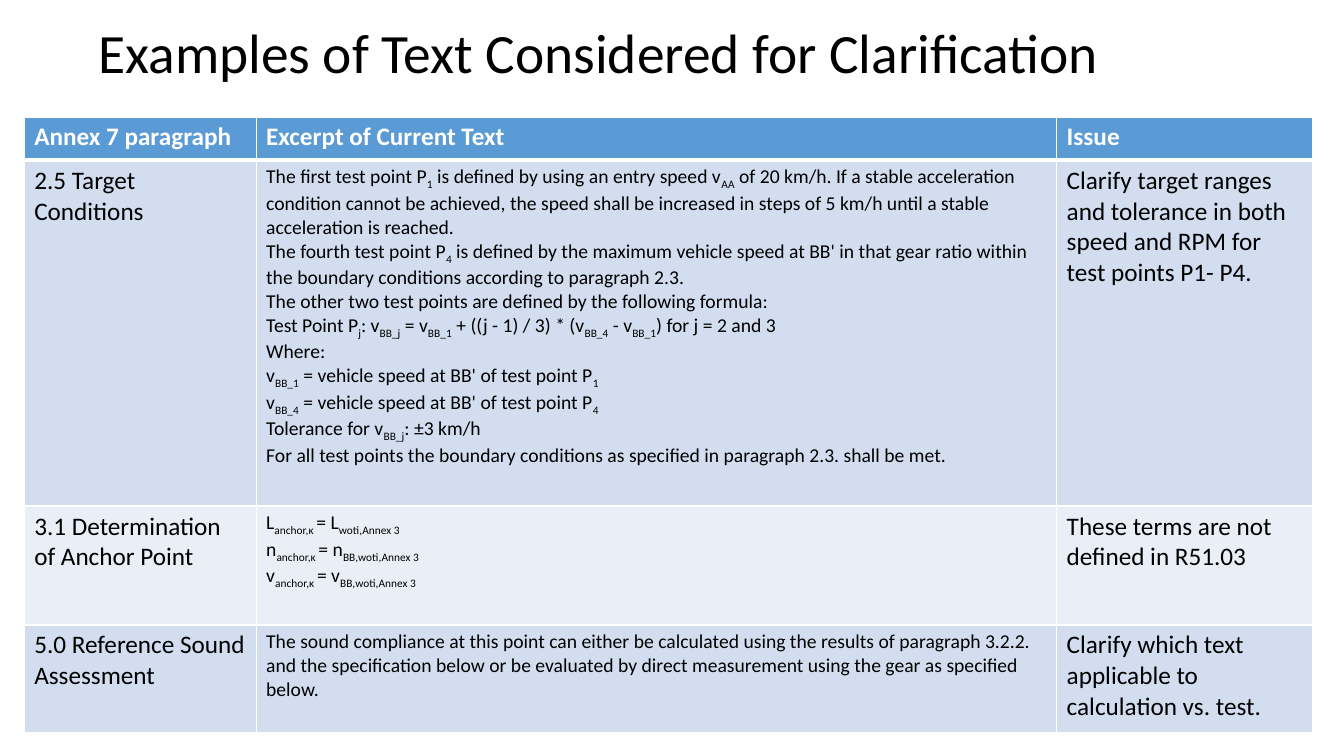
"""Build a slide with a table of regulation text that needs clarification."""
from lxml import etree
from pptx import Presentation
from pptx import util as u
from pptx.dml.color import RGBColor
from pptx.enum import text as t
from pptx.oxml import ns

TITLE = "Examples of Text Considered for Clarification"
HEAD = ["Annex 7 paragraph", "Excerpt of Current Text", "Issue"]
ROWS = [
    (
        "2.5 Target Conditions",
        [
            "The first test point P{1} is defined by using an entry speed v{AA} of 20 km/h. "
            "If a stable acceleration condition cannot be achieved, the speed shall be "
            "increased in steps of 5 km/h until a stable acceleration is reached.",
            "The fourth test point P{4} is defined by the maximum vehicle speed at BB' in "
            "that gear ratio within the boundary conditions according to paragraph 2.3.",
            "The other two test points are defined by the following formula:",
            "Test Point P{j}: v{BB_j} = v{BB_1} + ((j - 1) / 3) * (v{BB_4} - v{BB_1}) "
            "for j = 2 and 3",
            "Where:",
            "v{BB_1} = vehicle speed at BB' of test point P{1}",
            "v{BB_4} = vehicle speed at BB' of test point P{4}",
            "Tolerance for v{BB_j}: ±3 km/h",
            "For all test points the boundary conditions as specified in paragraph 2.3. "
            "shall be met.",
        ],
        "Clarify target ranges and tolerance in both speed and RPM for test points P1- P4.",
    ),
    (
        "3.1 Determination of Anchor Point",
        [
            "L{anchor,κ }= L{woti,Annex 3}",
            "n{anchor,κ }= n{BB,woti,Annex 3}",
            "v{anchor,κ }= v{BB,woti,Annex 3}",
        ],
        "These terms are not defined in R51.03",
    ),
    (
        "5.0 Reference Sound Assessment",
        [
            "The sound compliance at this point can either be calculated using the results "
            "of paragraph 3.2.2. and the specification below or be evaluated by direct "
            "measurement using the gear as specified below.",
        ],
        "Clarify which text applicable to calculation vs. test.",
    ),
]
WIDTHS = [2.3, 7.94, 2.54]
HEIGHTS = [0.43, 3.43, 1.18, 1.07]
THEME = {
    "font": "Calibri", "title": 39.6, "body": 18, "small": 14,
    "ink": "000000", "paper": "FFFFFF", "head": "5B9BD5",
    "bands": ["EAEFF7", "D2DEEF"], "thin": 1, "thick": 3,
}


def style(para, size, color, bold=False):
    font = para.font
    font.name, font.size, font.bold = THEME["font"], u.Pt(size), bold
    font.color.rgb = RGBColor.from_string(color)


def write(para, line):
    for i, part in enumerate(line.replace("}", "{").split("{")):
        if part:
            run = para.add_run()
            run.text = part
            if i % 2:
                run.font._element.set("baseline", "-25000")


def border(cell, row):
    props = cell._tc.get_or_add_tcPr()
    heavy = {(0, "B"), (1, "T")}
    for i, side in enumerate("LRTB"):
        size = THEME["thick" if (row, side) in heavy else "thin"]
        line = etree.Element(ns.qn(f"a:ln{side}"), w=str(u.Pt(size)))
        fill = etree.SubElement(line, ns.qn("a:solidFill"))
        etree.SubElement(fill, ns.qn("a:srgbClr"), val=THEME["paper"])
        props.insert(i, line)


def fill_cell(cell, row, col, lines):
    cell.fill.solid()
    back = THEME["bands"][row % 2] if row else THEME["head"]
    cell.fill.fore_color.rgb = RGBColor.from_string(back)
    border(cell, row)
    size = THEME["small" if row and col == 1 else "body"]
    frame = cell.text_frame
    for i, line in enumerate(lines):
        para = frame.add_paragraph() if i else frame.paragraphs[0]
        write(para, line)
        style(para, size, THEME["ink" if row else "paper"], not row)


def add_title(slide):
    box = slide.shapes.add_textbox(*map(u.Inches, (0.88, 0.21, 11.5, 0.69)))
    frame = box.text_frame
    frame.word_wrap = True
    frame.vertical_anchor = t.MSO_ANCHOR.MIDDLE
    para = frame.paragraphs[0]
    para.line_spacing = 0.9
    write(para, TITLE)
    style(para, THEME["title"], THEME["ink"])


def add_grid(slide):
    rows = [HEAD, *ROWS]
    place = (0.24, 1.16, sum(WIDTHS), sum(HEIGHTS))
    grid = slide.shapes.add_table(len(rows), len(HEAD), *map(u.Inches, place)).table
    for col, width in zip(grid.columns, WIDTHS):
        col.width = u.Inches(width)
    for row, height in zip(grid.rows, HEIGHTS):
        row.height = u.Inches(height)
    for r, row in enumerate(rows):
        for c, item in enumerate(row):
            lines = [item] if isinstance(item, str) else item
            fill_cell(grid.cell(r, c), r, c, lines)


def main():
    deck = Presentation()
    deck.slide_width, deck.slide_height = u.Inches(13.33), u.Inches(7.5)
    slide = deck.slides.add_slide(deck.slide_layouts[6])
    add_title(slide)
    add_grid(slide)
    deck.save("out.pptx")


if __name__ == "__main__":
    main()
